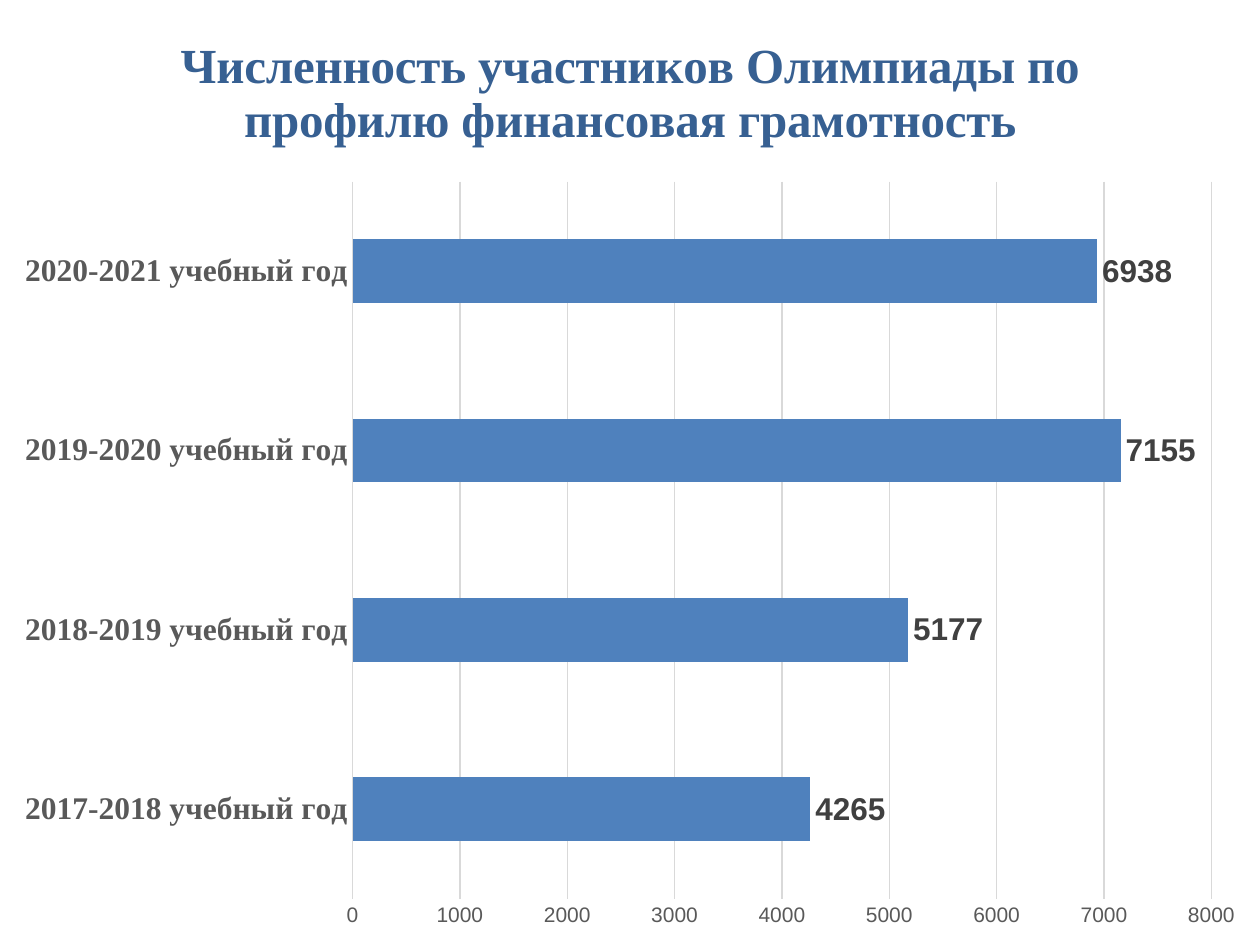
from pptx import Presentation
from pptx.chart.data import CategoryChartData
from pptx.dml.color import RGBColor
from pptx.enum.chart import XL_CHART_TYPE, XL_LABEL_POSITION, XL_TICK_MARK
from pptx.util import Inches, Pt

TITLE = "Численность участников Олимпиады по профилю финансовая грамотность"
PARTICIPANTS = {
    "2017-2018 учебный год": 4265,
    "2018-2019 учебный год": 5177,
    "2019-2020 учебный год": 7155,
    "2020-2021 учебный год": 6938,
}


def color(value):
    return RGBColor.from_string(value)


def format_font(font, name, size, font_color, bold=False):
    font.name = name
    font.size = Pt(size)
    font.bold = bold
    font.color.rgb = color(font_color)


def format_line(line):
    line.color.rgb = color("D9D9D9")
    line.width = Pt(0.75)


def add_bar_chart(slide, width, height):
    chart_data = CategoryChartData()
    chart_data.categories = list(PARTICIPANTS)
    chart_data.add_series("Series 1", list(PARTICIPANTS.values()))
    frame = slide.shapes.add_chart(
        XL_CHART_TYPE.BAR_CLUSTERED, 0, 0, width, height, chart_data
    )
    chart = frame.chart
    chart.has_legend = False
    format_font(chart.font, "Arial", 10, "000000")
    return chart


def format_title(chart):
    chart.has_title = True
    chart.chart_title.include_in_layout = False
    paragraph = chart.chart_title.text_frame.paragraphs[0]
    paragraph.text = TITLE
    for font in (paragraph.font, paragraph.runs[0].font):
        format_font(font, "Times New Roman", 28, "376092", True)


def format_axes(chart):
    for axis in (chart.category_axis, chart.value_axis):
        axis.major_tick_mark = XL_TICK_MARK.NONE
        axis.minor_tick_mark = XL_TICK_MARK.NONE
    category_axis = chart.category_axis
    category_axis.has_major_gridlines = False
    format_font(category_axis.tick_labels.font, "Times New Roman", 18, "595959", True)
    format_line(category_axis.format.line)
    value_axis = chart.value_axis
    value_axis.minimum_scale = 0
    value_axis.maximum_scale = 8000
    value_axis.major_unit = 1000
    value_axis.has_major_gridlines = True
    format_font(value_axis.tick_labels.font, "Arial", 12, "595959")
    format_line(value_axis.major_gridlines.format.line)
    value_axis.format.line.fill.background()


def format_bars(chart):
    plot = chart.plots[0]
    plot.gap_width = 182
    plot.vary_by_categories = False
    series = plot.series[0]
    series.format.fill.solid()
    series.format.fill.fore_color.rgb = color("4F81BD")
    series.format.line.fill.background()
    labels = series.data_labels
    labels.show_value = True
    labels.position = XL_LABEL_POSITION.OUTSIDE_END
    format_font(labels.font, "Arial", 18, "404040", True)


def main():
    presentation = Presentation()
    presentation.slide_width = Inches(10)
    presentation.slide_height = Inches(7.5)
    slide = presentation.slides.add_slide(presentation.slide_layouts[6])
    chart = add_bar_chart(slide, Inches(10), Inches(7.5))
    format_title(chart)
    format_axes(chart)
    format_bars(chart)
    presentation.save("out.pptx")


if __name__ == "__main__":
    main()
